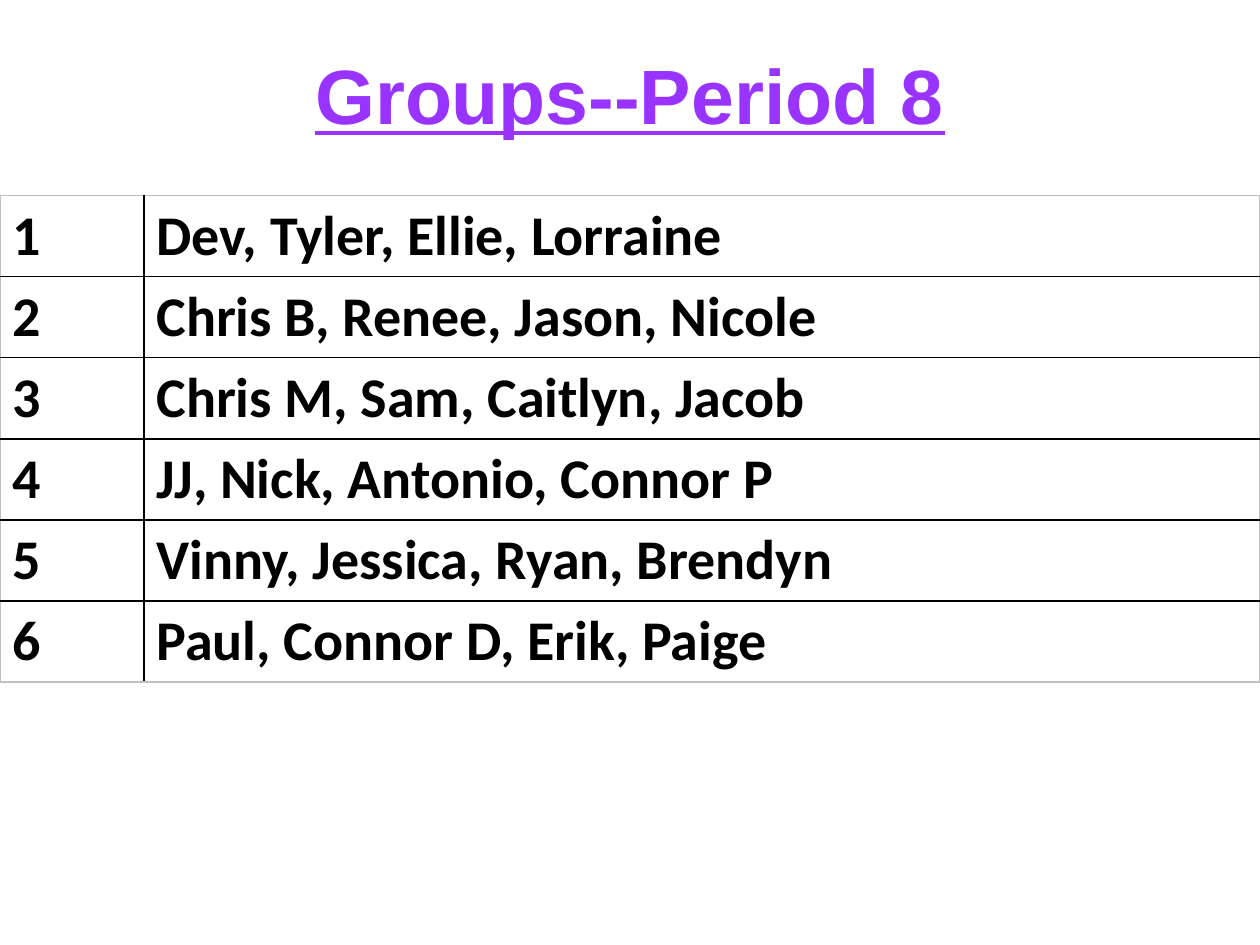
from dataclasses import dataclass

from lxml import etree
from pptx import Presentation
from pptx import util as u
from pptx.dml.color import RGBColor
from pptx.enum import text
from pptx.oxml import ns


@dataclass(frozen=True)
class Theme:
    """Fonts, type sizes and colours of the page."""
    title_font: str = "Arial"
    title_size: int = 44
    title_color: str = "9933FF"
    body_font: str = "Calibri"
    body_size: int = 32
    body_color: str = "000000"
    inner_line: str = "000000"
    outer_line: str = "C0C0C0"
    line_width: int = 1


THEME = Theme()
GROUPS = [
    "Dev, Tyler, Ellie, Lorraine",
    "Chris B, Renee, Jason, Nicole",
    "Chris M, Sam, Caitlyn, Jacob",
    "JJ, Nick, Antonio, Connor P",
    "Vinny, Jessica, Ryan, Brendyn",
    "Paul, Connor D, Erik, Paige",
]
PAGE_WIDTH, PAGE_HEIGHT = u.Cm(25.4), u.Cm(19.05)
NUMBER_WIDTH, ROW_HEIGHT = u.Cm(2.9), u.Cm(1.6)


def style_text(para, font, size, color, underline=False):
    """Format every run of a paragraph in bold."""
    for span in para.runs:
        span.font.name = font
        span.font.size = u.Pt(size)
        span.font.bold = True
        span.font.underline = underline
        span.font.color.rgb = RGBColor.from_string(color)


def add_title(page, wording):
    """Add the centred, underlined heading."""
    box = page.shapes.add_textbox(0, u.Cm(0.05), PAGE_WIDTH, u.Cm(3.68))
    frame = box.text_frame
    frame.word_wrap = True
    frame.vertical_anchor = text.MSO_ANCHOR.MIDDLE
    frame.text = wording
    para = frame.paragraphs[0]
    para.alignment = text.PP_ALIGN.CENTER
    style_text(para, THEME.title_font, THEME.title_size, THEME.title_color, True)


def set_borders(cell, outer_sides):
    """Draw the four cell borders, with the outer sides lighter."""
    properties = cell._tc.get_or_add_tcPr()
    for side in "LRTB":
        line = etree.SubElement(properties, ns.qn(f"a:ln{side}"), w=str(u.Pt(THEME.line_width)))
        fill = etree.SubElement(line, ns.qn("a:solidFill"))
        color = THEME.outer_line if side in outer_sides else THEME.inner_line
        etree.SubElement(fill, ns.qn("a:srgbClr"), val=color)


def fill_cell(cell, wording, outer_sides):
    """Write and format one table cell."""
    cell.text_frame.text = wording
    style_text(cell.text_frame.paragraphs[0], THEME.body_font, THEME.body_size, THEME.body_color)
    set_borders(cell, outer_sides)
    cell.fill.background()


def add_groups(page, groups):
    """Add the table of numbered groups."""
    count = len(groups)
    table = page.shapes.add_table(
        count, 2, 0, u.Cm(3.94), PAGE_WIDTH, ROW_HEIGHT * count).table
    table.first_row = table.horz_banding = False
    table.columns[0].width = NUMBER_WIDTH
    table.columns[1].width = PAGE_WIDTH - NUMBER_WIDTH
    for row, members in enumerate(groups):
        edges = ("T" if row == 0 else "") + ("B" if row == count - 1 else "")
        fill_cell(table.cell(row, 0), str(row + 1), edges + "L")
        fill_cell(table.cell(row, 1), members, edges + "R")


def main():
    """Build and save the deck."""
    deck = Presentation()
    deck.slide_width, deck.slide_height = PAGE_WIDTH, PAGE_HEIGHT
    page = deck.slides.add_slide(deck.slide_layouts[6])
    add_groups(page, GROUPS)
    add_title(page, "Groups--Period 8")
    deck.save("out.pptx")


if __name__ == "__main__":
    main()
